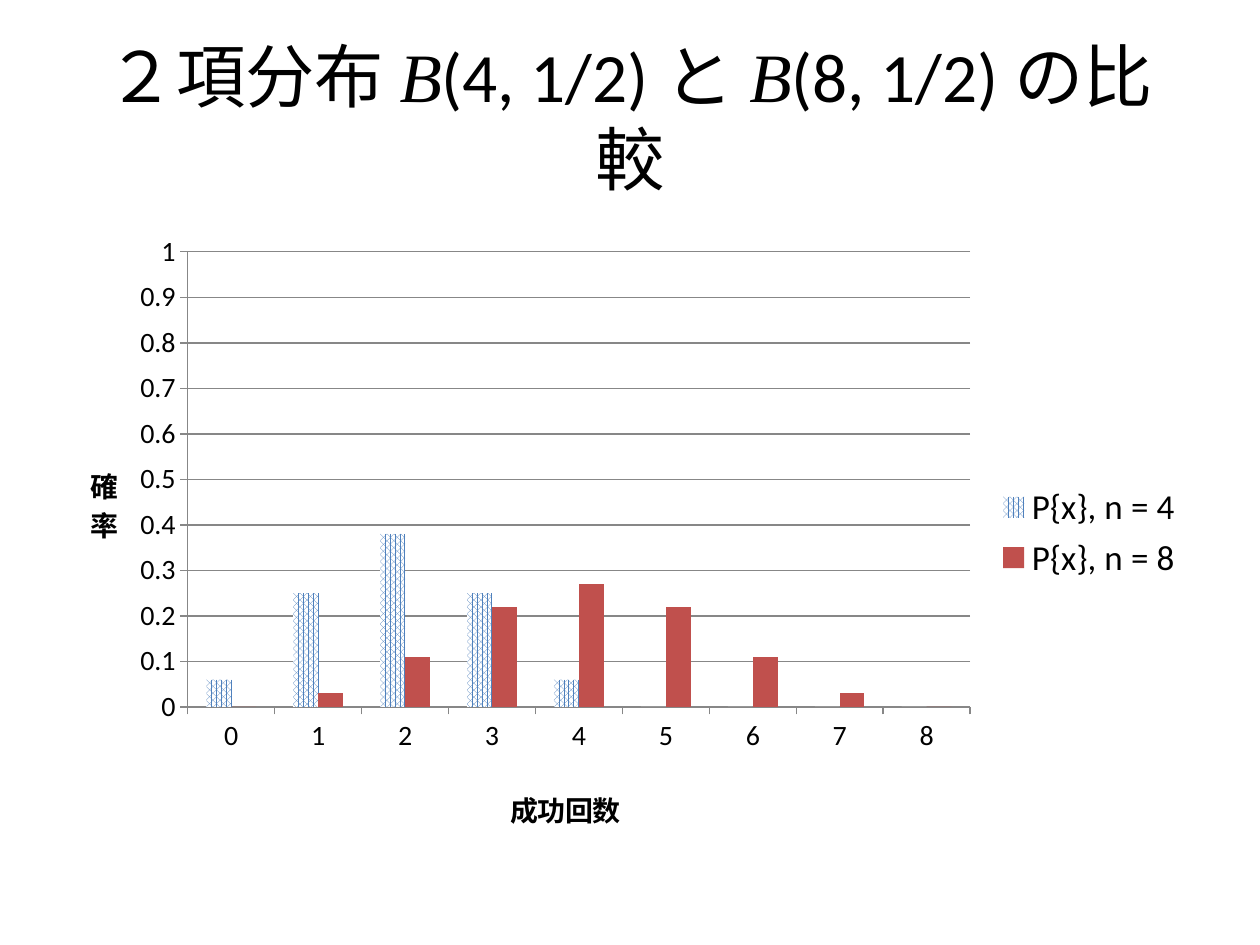
"""Build a slide that compares two binomial distributions in a column chart."""
from lxml.etree import SubElement
from pptx import Presentation
from pptx.chart.data import CategoryChartData
from pptx.dml.color import RGBColor
from pptx.enum.chart import XL_CHART_TYPE, XL_LEGEND_POSITION, XL_TICK_MARK
from pptx.enum.dml import MSO_PATTERN
from pptx.enum.text import MSO_ANCHOR, MSO_AUTO_SIZE, PP_ALIGN
from pptx.oxml.ns import qn
from pptx.util import Cm, Pt

SANS, SERIF = "Calibri", "Times New Roman"
BLACK, WHITE, GRAY, BLUE, RED = "000000", "FFFFFF", "878787", "4F81BD", "C0504D"
TITLE = [
    ("２項分布 ", False),
    ("B", True),
    ("(4, 1/2) と", False),
    (" B", True),
    ("(8, 1/2) の比較", False),
]
SERIES = [
    ("P{x}, n = 4", (0.06, 0.25, 0.38, 0.25, 0.06, 0, 0, 0, 0)),
    ("P{x}, n = 8", (0, 0.03, 0.11, 0.22, 0.27, 0.22, 0.11, 0.03, 0)),
]
LEFT, WIDTH = Cm(1.27), Cm(22.86)


def color(code):
    return RGBColor.from_string(code)


def style(font, size, face=SANS, bold=False, italic=False):
    font.size, font.name = Pt(size), face
    font.bold, font.italic = bold, italic
    font.color.rgb = color(BLACK)


def write(par, text, **form):
    run = par.add_run()
    run.text = text
    style(run.font, **form)


def place(node, index, **parts):
    for old in node.findall(qn("c:layout")):
        node.remove(old)
    frame = SubElement(node, qn("c:layout"))
    node.insert(index, frame)
    manual = SubElement(frame, qn("c:manualLayout"))
    if "w" in parts:
        SubElement(manual, qn("c:layoutTarget")).set("val", "inner")
    for mode in ("xMode", "yMode"):
        SubElement(manual, qn(f"c:{mode}")).set("val", "edge")
    for key, value in parts.items():
        SubElement(manual, qn(f"c:{key}")).set("val", str(value))


def label(axis, text, x, y):
    title = axis.axis_title
    write(title.text_frame.paragraphs[0], text, size=16, bold=True)
    place(title._element, 1, x=x, y=y)
    style(axis.tick_labels.font, 16)
    axis.major_tick_mark = XL_TICK_MARK.OUTSIDE
    axis.minor_tick_mark = XL_TICK_MARK.NONE
    axis.format.line.color.rgb = color(GRAY)


def add_title(slide):
    title = slide.shapes.title
    title.left, title.top, title.width, title.height = LEFT, Cm(0.76), WIDTH, Cm(3.18)
    frame = title.text_frame
    frame.word_wrap, frame.auto_size = True, MSO_AUTO_SIZE.NONE
    frame.vertical_anchor = MSO_ANCHOR.MIDDLE
    par = frame.paragraphs[0]
    par.alignment = PP_ALIGN.CENTER
    for text, math in TITLE:
        write(par, text, size=39.6, face=SERIF if math else SANS, italic=math)


def add_chart(slide):
    data = CategoryChartData()
    data.categories = [str(n) for n in range(9)]
    for name, values in SERIES:
        data.add_series(name, values)
    chart = slide.shapes.add_chart(
        XL_CHART_TYPE.COLUMN_CLUSTERED, LEFT, Cm(4.45), WIDTH, Cm(12.57), data
    ).chart
    style(chart.font, 10)
    chart.has_title = False
    chart.has_legend = True
    chart.legend.position = XL_LEGEND_POSITION.RIGHT
    chart.legend.include_in_layout = False
    style(chart.legend.font, 20)

    label(chart.category_axis, "成功回数", 0.39, 0.9)
    scale = chart.value_axis
    label(scale, "確率", 0.02, 0.38)
    body = scale.axis_title.text_frame._txBody.find(qn("a:bodyPr"))
    body.set("rot", "0")
    body.set("vert", "wordArtVertRtl")
    scale.minimum_scale, scale.maximum_scale, scale.major_unit = 0, 1, 0.1
    scale.has_major_gridlines = True
    scale.major_gridlines.format.line.color.rgb = color(GRAY)

    plot = chart.plots[0]
    plot.gap_width, plot.overlap, plot.vary_by_categories = 150, 0, False
    small, large = (row.format.fill for row in plot.series)
    small.patterned()
    small.pattern = MSO_PATTERN.PERCENT_75
    small.fore_color.rgb, small.back_color.rgb = color(BLUE), color(WHITE)
    large.solid()
    large.fore_color.rgb = color(RED)
    area = chart._chartSpace.find(".//" + qn("c:plotArea"))
    place(area, 0, x=0.11, y=0.05, w=0.69, h=0.73)


def main():
    deck = Presentation()
    deck.slide_width, deck.slide_height = Cm(25.4), Cm(19.05)
    slide = deck.slides.add_slide(deck.slide_layouts[5])
    add_title(slide)
    add_chart(slide)
    deck.save("out.pptx")


if __name__ == "__main__":
    main()
